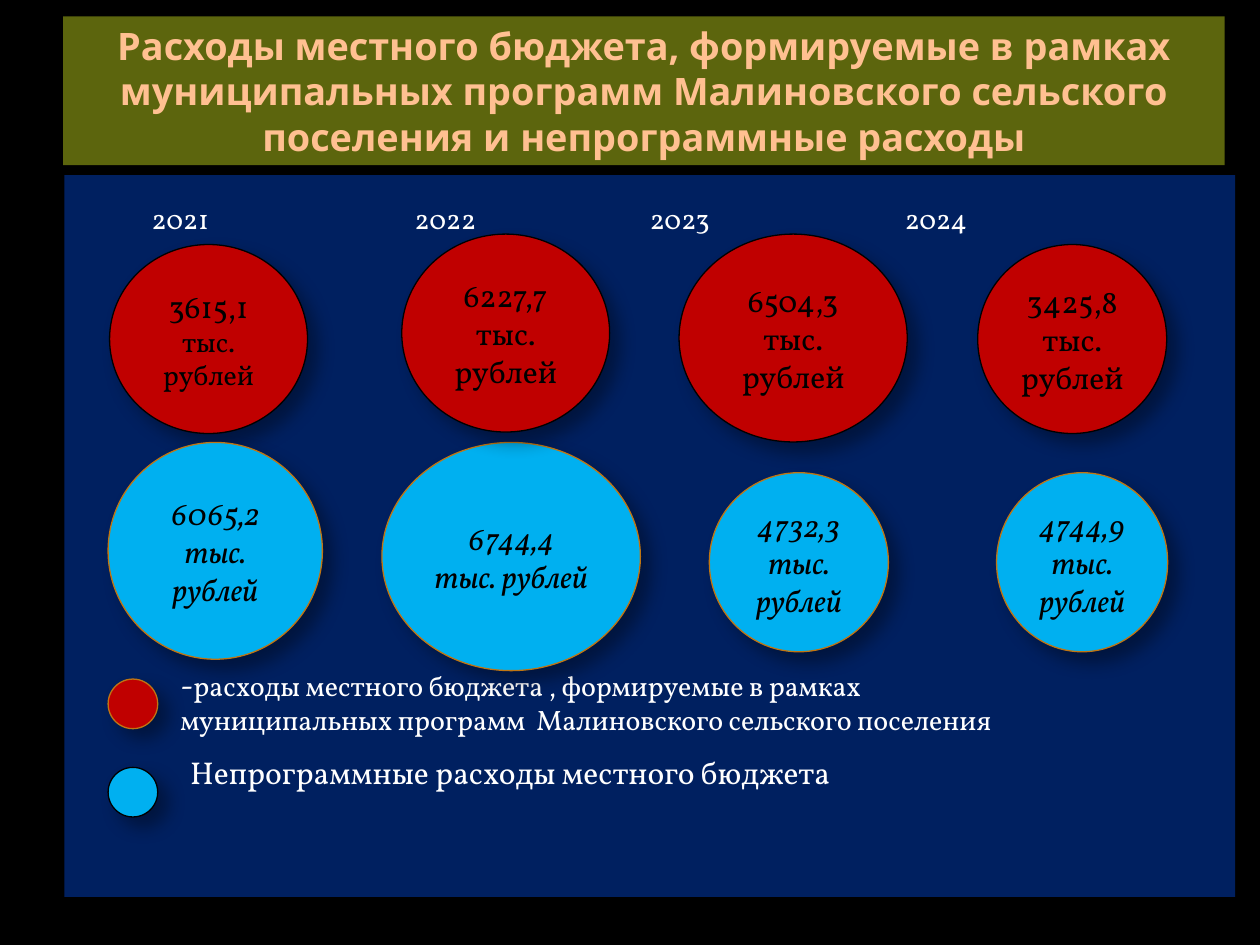
import pptx
import pptx.dml.color
import pptx.enum.shapes
import pptx.enum.text
import pptx.oxml
import pptx.oxml.ns
import pptx.util
from pptx.util import Cm

COLORS = {
    "background": "000000",
    "title_fill": "5C650D",
    "title_text": "FFC091",
    "panel": "002060",
    "light": "FFFFFF",
    "dark": "000000",
    "program": "C00000",
    "other": "00B0F0",
    "outline": "C07512",
}
TITLE_FONT, TEXT_FONT = "Noto Sans", "Vollkorn"
CENTER = pptx.enum.text.PP_ALIGN.CENTER
LEFT = pptx.enum.text.PP_ALIGN.LEFT
MIDDLE = pptx.enum.text.MSO_ANCHOR.MIDDLE
TOP = pptx.enum.text.MSO_ANCHOR.TOP
UNIT = "тыс. рублей"

TITLE = ("Расходы местного бюджета, формируемые в рамках муниципальных программ "
         "Малиновского сельского поселения и непрограммные расходы")

# Year and the left edge of its label in cm
YEARS = [("2021", 2.81), ("2022", 8.11), ("2023", 12.85), ("2024", 17.99)]

# Kind of spending, amount, size of the unit, and box in cm, from back to front
AMOUNTS = [
    ("program", "3615,1", 16, (2.21, 4.93, 3.99, 3.81)),
    ("program", "6504,3", 18, (13.69, 4.72, 4.6, 4.19)),
    ("other", "6065,2", 18, (2.18, 8.92, 4.32, 4.37)),
    ("other", "6744,4", 18, (7.7, 8.92, 5.21, 4.6)),
    ("program", "6227,7", 18, (8.1, 4.72, 4.19, 3.99)),
    ("other", "4732,3", 18, (14.3, 9.53, 3.61, 3.61)),
    ("program", "3425,8", 18, (19.71, 4.93, 3.81, 3.81)),
    ("other", "4744,9", 18, (20.09, 9.53, 3.45, 3.61)),
]

# Kind, outline, top of the marker, indent and space before the text, runs with sizes
LEGEND = [
    ("program", "outline", 13.69, 2.08, 0,
     [("-", 18), ("расходы местного бюджета , формируемые в рамках муниципальных "
                  "программ  Малиновского сельского поселения", 16)]),
    ("other", "dark", 15.47, 2.28, 9.5,
     [("Непрограммные расходы местного бюджета", 18)]),
]


def set_fill(fill, color):
    fill.solid()
    fill.fore_color.rgb = pptx.dml.color.RGBColor.from_string(COLORS[color])


def add_text(paragraph, text, *, size, color, font=TEXT_FONT, align=LEFT,
             bold=False, italic=False):
    paragraph.alignment = align
    run = paragraph.add_run()
    run.text = text
    run.font.name = font
    run.font.size = pptx.util.Pt(size)
    run.font.bold = bold
    run.font.italic = italic
    set_fill(run.font.fill, color)


def format_placeholder(placeholder, box, color, anchor):
    placeholder.left, placeholder.top, placeholder.width, placeholder.height = map(Cm, box)
    set_fill(placeholder.fill, color)
    frame = placeholder.text_frame
    frame.auto_size = pptx.enum.text.MSO_AUTO_SIZE.NONE
    frame.vertical_anchor = anchor
    return frame


def set_indent(paragraph, indent):
    """Indent the whole paragraph and drop its bullet."""
    properties = paragraph._p.get_or_add_pPr()
    properties.set("marL", str(int(Cm(indent))))
    properties.set("indent", "0")
    properties.append(pptx.oxml.parse_xml(f'<a:buNone {pptx.oxml.ns.nsdecls("a")}/>'))


def add_shadow(shape):
    effects = pptx.oxml.parse_xml(
        f'<a:effectLst {pptx.oxml.ns.nsdecls("a")}>'
        f'<a:outerShdw blurRad="{pptx.util.Pt(10.2)}" dist="{pptx.util.Pt(8)}" '
        'dir="2700000" algn="tl" rotWithShape="0">'
        f'<a:srgbClr val="{COLORS["dark"]}"><a:alpha val="35000"/></a:srgbClr>'
        '</a:outerShdw></a:effectLst>')
    shape._element.spPr.append(effects)


def add_circle(slide, box, color, outline):
    shape = slide.shapes.add_shape(pptx.enum.shapes.MSO_SHAPE.OVAL, *map(Cm, box))
    set_fill(shape.fill, color)
    set_fill(shape.line.fill, outline)
    shape.line.width = pptx.util.Pt(0.75)
    add_shadow(shape)
    return shape


def add_year(slide, year, left):
    frame = slide.shapes.add_textbox(*map(Cm, (left, 3.93, 2, 0.94))).text_frame
    frame.word_wrap = True
    add_text(frame.paragraphs[0], year, size=16, color="light")


def add_amount(slide, kind, amount, unit_size, box):
    outline = "dark" if kind == "program" else "outline"
    frame = add_circle(slide, box, kind, outline).text_frame
    frame.word_wrap = True
    frame.vertical_anchor = MIDDLE
    style = {"color": "dark", "align": CENTER, "italic": kind == "other"}
    add_text(frame.paragraphs[0], amount, size=18, **style)
    add_text(frame.add_paragraph(), UNIT, size=unit_size, **style)


def add_legend_entry(slide, paragraph, kind, outline, marker_top, indent, space, runs):
    add_circle(slide, (2.18, marker_top, 1, 1), kind, outline)
    paragraph.space_before = pptx.util.Pt(space)
    set_indent(paragraph, indent)
    for text, size in runs:
        add_text(paragraph, text, size=size, color="light")


def main():
    presentation = pptx.Presentation()
    presentation.slide_width, presentation.slide_height = Cm(25.4), Cm(19.05)
    slide = presentation.slides.add_slide(presentation.slide_layouts[1])
    set_fill(slide.background.fill, "background")

    # Title band
    frame = format_placeholder(slide.shapes.title, (1.27, 0.33, 23.42, 3), "title_fill", MIDDLE)
    add_text(frame.paragraphs[0], TITLE, size=21.6, color="title_text", font=TITLE_FONT,
             align=CENTER, bold=True)

    # Panel, with the legend as its list
    frame = format_placeholder(slide.placeholders[1], (1.3, 3.53, 23.6, 14.55), "panel", TOP)
    frame.margin_top, frame.margin_right = Cm(9.88), Cm(3.25)
    for index, entry in enumerate(LEGEND):
        paragraph = frame.add_paragraph() if index else frame.paragraphs[0]
        add_legend_entry(slide, paragraph, *entry)

    # Years and amounts
    for year, left in YEARS:
        add_year(slide, year, left)
    for amount in AMOUNTS:
        add_amount(slide, *amount)

    presentation.save("out.pptx")


if __name__ == "__main__":
    main()
